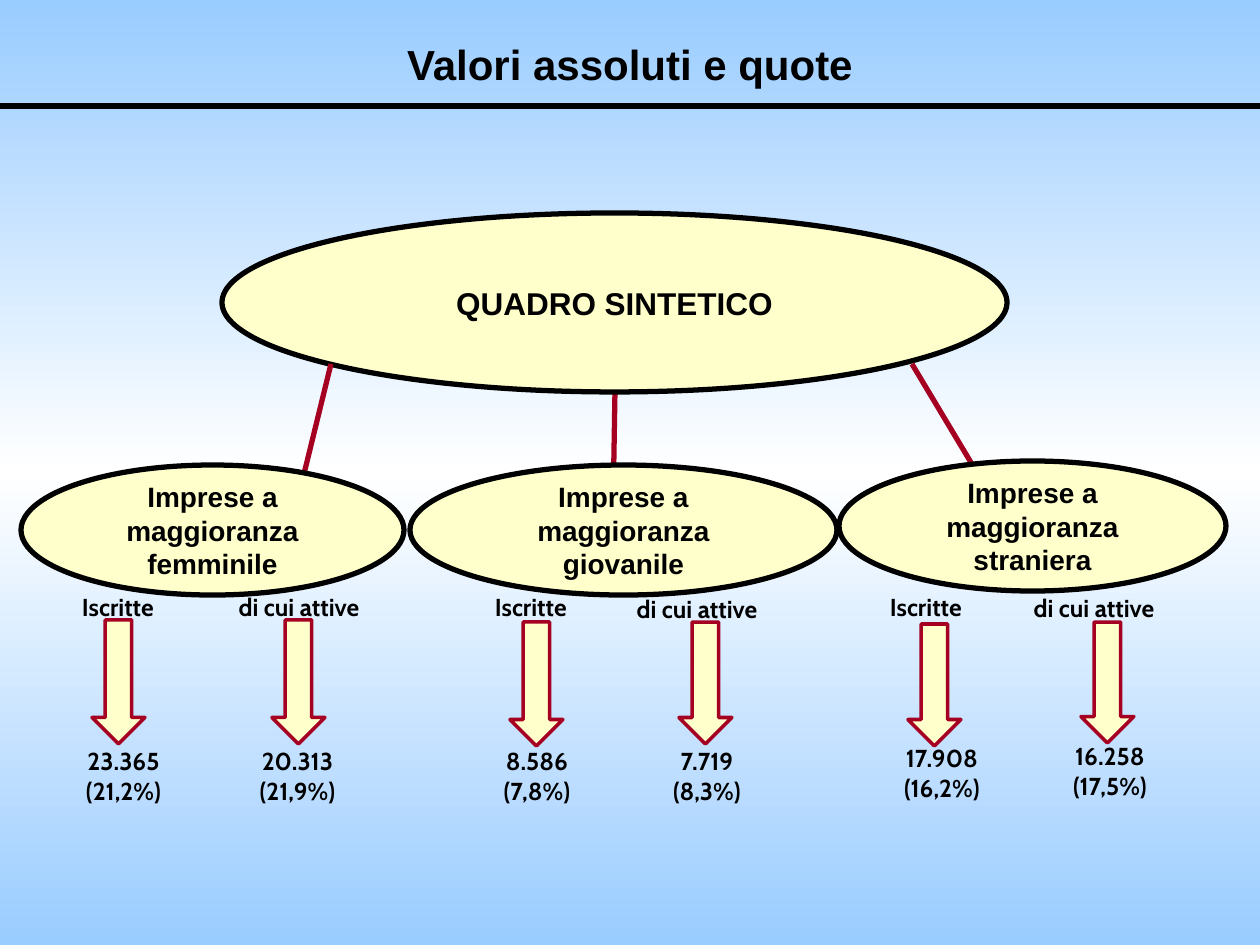
"""Build the summary slide of business counts and shares."""
from copy import deepcopy
from dataclasses import dataclass

from lxml import etree
from pptx import Presentation
from pptx import util as u
from pptx.dml.color import RGBColor
from pptx.enum import shapes, text
from pptx.oxml.ns import qn

SCALE = 914400 / 126


@dataclass(frozen=True)
class Theme:
    ink: str = "000000"
    cream: str = "FFFFCC"
    crimson: str = "A50021"
    sky: tuple = ("99CCFF", "FFFFFF", "99CCFF")
    heading: str = "Arial"
    body: str = "Cabin"
    title_size: int = 24
    main_size: int = 18
    group_size: int = 16
    figure_size: int = 14
    thick: int = 3
    thin: int = 2


def px(*lengths):
    return [u.Emu(round(length * SCALE)) for length in lengths]


def apply(target, values):
    for name, value in values.items():
        setattr(target, name, value)


class Painter:
    def __init__(self, page, theme):
        self.page = page
        self.theme = theme

    def background(self):
        fill = self.page.background.fill
        fill.gradient()
        fill.gradient_angle = 270
        stops = next(self.page.element.iter(qn("a:gsLst")))
        stops.append(deepcopy(stops[-1]))
        for index, (stop, color) in enumerate(zip(fill.gradient_stops, self.theme.sky)):
            stop.color.rgb = RGBColor.from_string(color)
            stop.position = index / 2

    def set_text(self, box, lines, font, size, anchor):
        frame = box.text_frame
        apply(frame, {"word_wrap": True, "vertical_anchor": anchor})
        for index, line in enumerate(lines):
            para = frame.add_paragraph() if index else frame.paragraphs[0]
            para.alignment = text.PP_ALIGN.CENTER
            span = para.add_run()
            span.text = line
            apply(span.font, {"name": font, "size": u.Pt(size), "bold": True})
            span.font.color.rgb = RGBColor.from_string(self.theme.ink)

    def outline(self, item, color, width):
        item.line.color.rgb = RGBColor.from_string(color)
        item.line.width = u.Pt(width)

    def shape(self, kind, place, color, width):
        item = self.page.shapes.add_shape(kind, *px(*place))
        item.shadow.inherit = False
        item.fill.solid()
        item.fill.fore_color.rgb = RGBColor.from_string(self.theme.cream)
        self.outline(item, color, width)
        return item

    def ellipse(self, place, label, size):
        item = self.shape(shapes.MSO_SHAPE.OVAL, place, self.theme.ink, self.theme.thick)
        self.set_text(item, [label], self.theme.heading, size, text.MSO_ANCHOR.MIDDLE)

    def down_arrow(self, place):
        self.shape(shapes.MSO_SHAPE.DOWN_ARROW, place, self.theme.crimson, self.theme.thin)

    def text_box(self, place, lines, font, size, anchor=text.MSO_ANCHOR.TOP):
        box = self.page.shapes.add_textbox(*px(*place))
        self.set_text(box, lines, font, size, anchor)
        if anchor == text.MSO_ANCHOR.TOP:
            box.text_frame.auto_size = text.MSO_AUTO_SIZE.SHAPE_TO_FIT_TEXT

    def line(self, ends, color, arrow=False):
        item = self.page.shapes.add_connector(shapes.MSO_CONNECTOR.STRAIGHT, *px(*ends))
        self.outline(item, color, self.theme.thick)
        properties = item.element.spPr
        if arrow:
            etree.SubElement(properties.find(qn("a:ln")), qn("a:tailEnd"), type="arrow")
        etree.SubElement(properties, qn("a:effectLst"))


def main():
    theme = Theme()
    deck = Presentation()
    deck.slide_width, deck.slide_height = px(1260, 945)
    painter = Painter(deck.slides.add_slide(deck.slide_layouts[6]), theme)
    painter.background()

    painter.line((615, 392, 612, 572), theme.crimson, arrow=True)
    painter.ellipse((222, 213, 785, 179), "QUADRO SINTETICO", theme.main_size)
    for branch in ((912, 364, 1045, 586), (331, 364, 276, 588)):
        painter.line(branch, theme.crimson, arrow=True)

    groups = (
        ("femminile", 21, 465, 383),
        ("giovanile", 410, 465, 427),
        ("straniera", 839, 461, 387),
    )
    for group, left, top, width in groups:
        painter.ellipse((left, top, width, 130), f"Imprese a maggioranza {group}", theme.group_size)

    figures = (
        ("Iscritte", (37, 586, 162), (92, 620, 124), (54, 740, 139), ("23.365", "(21,2%)")),
        ("di cui attive", (212, 586, 174), (272, 620, 124), (228, 740, 139), ("20.313", "(21,9%)")),
        ("Iscritte", (450, 586, 162), (510, 622, 124), (461, 740, 152), ("8.586", "(7,8%)")),
        ("di cui attive", (610, 588, 174), (679, 622, 122), (631, 740, 152), ("7.719", "(8,3%)")),
        ("Iscritte", (845, 586, 162), (908, 624, 122), (866, 737, 152), ("17.908", "(16,2%)")),
        ("di cui attive", (1007, 587, 174), (1081, 622, 121), (1034, 735, 152), ("16.258", "(17,5%)")),
    )
    for label, (left, top, width), (arrow_left, arrow_top, height), value_place, values in figures:
        painter.text_box((left, top, width, 43), [label], theme.body, theme.figure_size)
        painter.down_arrow((arrow_left, arrow_top, 53, height))
        painter.text_box((*value_place, 72), values, theme.body, theme.figure_size)

    painter.line((0, 106, 1260, 106), theme.ink)
    painter.text_box((0, 27, 1260, 73), ["Valori assoluti e quote"], theme.heading,
                     theme.title_size, text.MSO_ANCHOR.MIDDLE)
    deck.save("out.pptx")


if __name__ == "__main__":
    main()
